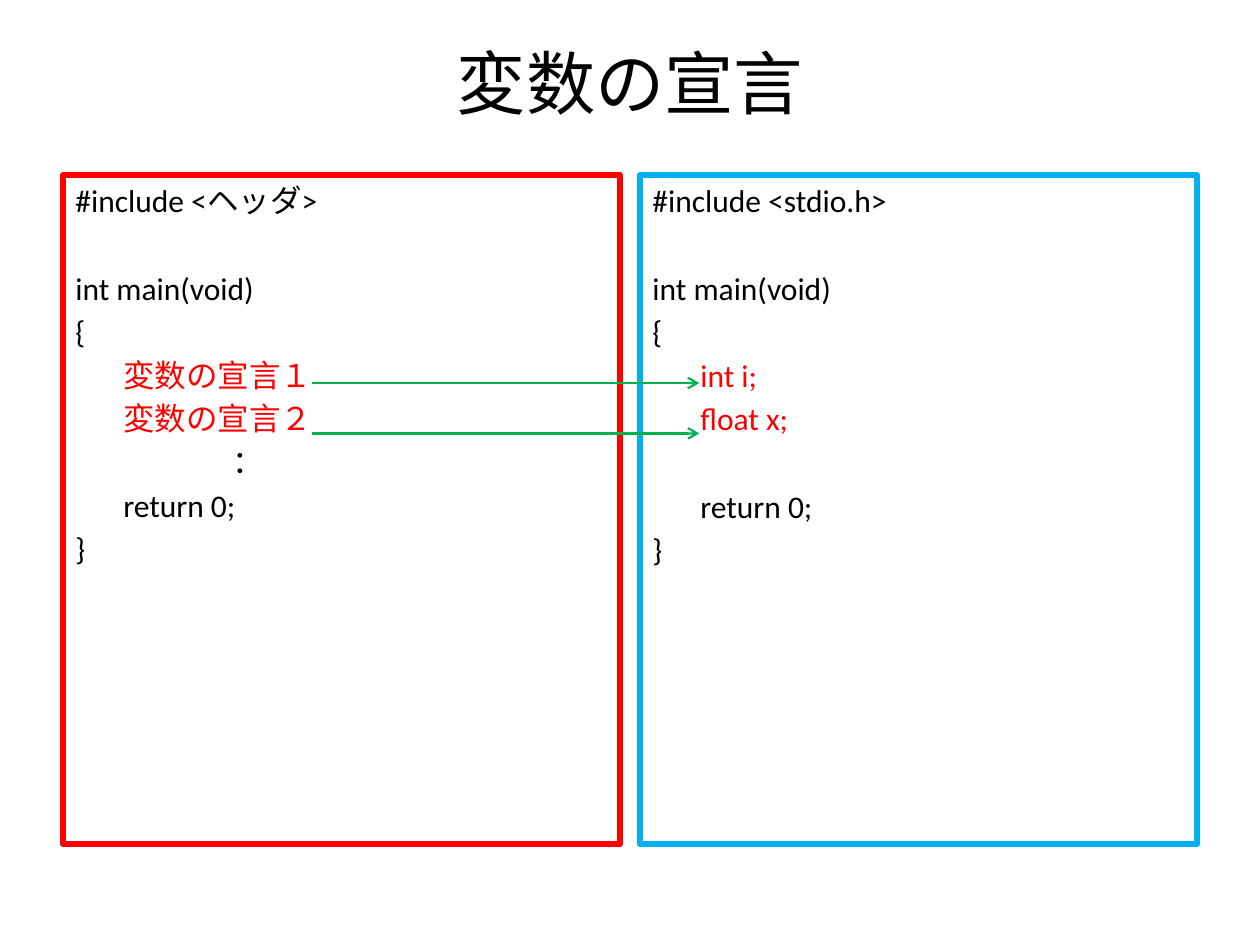
import pptx
import pptx.dml.color
import pptx.enum.shapes
import pptx.enum.text
import pptx.oxml
import pptx.oxml.ns
import pptx.util
from pptx.util import Inches, Pt

RGBColor = pptx.dml.color.RGBColor
BLACK = RGBColor(0x00, 0x00, 0x00)
RED = RGBColor(0xFF, 0x00, 0x00)
BLUE = RGBColor(0x00, 0xB0, 0xF0)
GREEN = RGBColor(0x00, 0xB0, 0x50)
ALIGN = pptx.enum.text.PP_ALIGN
ANCHOR = pptx.enum.text.MSO_ANCHOR

TAB = 0.38       # code indent, inches
GAP = 3.2        # space before each code line, points
PITCH = 25.2     # distance between code lines, points


def write(p, text, size=18, color=BLACK, align=ALIGN.LEFT, indent=0, before=0):
    """Fill one paragraph with formatted text."""
    p.alignment = align
    p.space_before = Pt(before)
    p._p.get_or_add_pPr().set("marL", str(Inches(indent)))
    r = p.add_run()
    r.text = text
    r.font.name = "Calibri"
    r.font.size = Pt(size)
    r.font.color.rgb = color


class SlideBuilder:
    def __init__(self, slide):
        self.s = slide

    def title(self, text, x, y, w, h):
        sp = self.s.shapes.add_textbox(Inches(x), Inches(y), Inches(w), Inches(h))
        tf = sp.text_frame
        tf.word_wrap = True
        tf.vertical_anchor = ANCHOR.MIDDLE
        write(tf.paragraphs[0], text, size=39.6, align=ALIGN.CENTER)

    def code_box(self, lines, color, x, y, w, h):
        """Each line is (text, indent, colour, skipped lines before it)."""
        sp = self.s.shapes.add_shape(
            pptx.enum.shapes.MSO_SHAPE.RECTANGLE,
            Inches(x), Inches(y), Inches(w), Inches(h))
        sp.shadow.inherit = False
        sp.fill.background()
        sp.line.color.rgb = color
        sp.line.width = Pt(3.5)
        tf = sp.text_frame
        tf.word_wrap = True
        tf.vertical_anchor = ANCHOR.TOP
        for i, (text, indent, ink, skip) in enumerate(lines):
            p = tf.add_paragraph() if i else tf.paragraphs[0]
            write(p, text, color=ink, indent=indent, before=GAP + skip * PITCH)

    def arrow(self, x1, x2, y):
        c = self.s.shapes.add_connector(
            pptx.enum.shapes.MSO_CONNECTOR.STRAIGHT,
            Inches(x1), Inches(y), Inches(x2), Inches(y))
        c.line.color.rgb = GREEN
        c.line.width = Pt(1.25)
        ns = pptx.oxml.ns.nsdecls("a")
        c.line._get_or_add_ln().append(
            pptx.oxml.parse_xml(f'<a:tailEnd {ns} type="arrow"/>'))
        c._element.spPr.append(pptx.oxml.parse_xml(f"<a:effectLst {ns}/>"))


def program(header, body, skip):
    """Lines of a C program around its declarations."""
    return [
        (f"#include <{header}>", 0, BLACK, 0),
        ("int main(void)", 0, BLACK, 1),
        ("{", 0, BLACK, 0),
        *body,
        ("return 0;", TAB, BLACK, skip),
        ("}", 0, BLACK, 0),
    ]


def main():
    prs = pptx.Presentation()
    prs.slide_width, prs.slide_height = Inches(10), Inches(7.5)
    b = SlideBuilder(prs.slides.add_slide(prs.slide_layouts[6]))

    # Title
    b.title("変数の宣言", 0.5, 0.3, 9, 0.69)

    # General form on the left, example on the right
    form = [("変数の宣言１", TAB, RED, 0), ("変数の宣言２", TAB, RED, 0),
            ("：", 1.25, BLACK, 0)]
    example = [("int i;", TAB, RED, 0), ("float x;", TAB, RED, 0)]
    b.code_box(program("ヘッダ", form, 0), RED, 0.5, 1.39, 4.42, 5.31)
    b.code_box(program("stdio.h", example, 1), BLUE, 5.08, 1.39, 4.42, 5.31)

    # Arrows from each declaration to its example
    for y in (3.04, 3.44):
        b.arrow(2.48, 5.55, y)

    prs.save("out.pptx")


if __name__ == "__main__":
    main()
